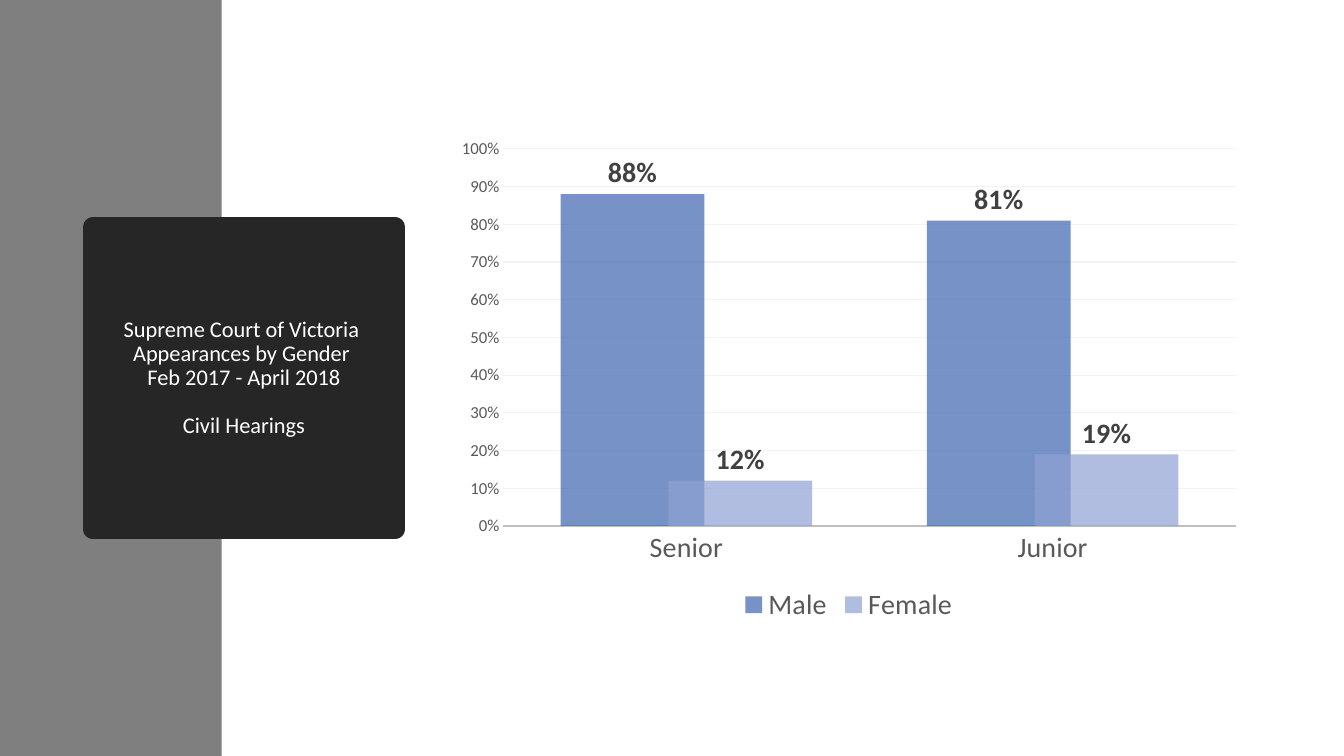
from lxml import etree
from pptx import Presentation
from pptx.chart.data import CategoryChartData
from pptx.dml.color import RGBColor
from pptx.enum.chart import XL_CHART_TYPE, XL_LABEL_POSITION, XL_LEGEND_POSITION, XL_TICK_MARK
from pptx.enum.shapes import MSO_SHAPE
from pptx.enum.text import MSO_ANCHOR, PP_ALIGN
from pptx.oxml.ns import qn
from pptx.util import Cm, Pt

RECT = MSO_SHAPE.RECTANGLE
CENTER = PP_ALIGN.CENTER
MIDDLE = MSO_ANCHOR.MIDDLE
COLUMNS = XL_CHART_TYPE.COLUMN_CLUSTERED
OUTSIDE = XL_LABEL_POSITION.OUTSIDE_END
BOTTOM = XL_LEGEND_POSITION.BOTTOM
NO_TICK = XL_TICK_MARK.NONE

FONT = "Calibri"
GREY_TEXT = "595959"
TITLE = [
    ["Supreme Court of Victoria ", "Appearances by Gender ", "Feb 2017 - April 2018"],
    ["Civil Hearings"],
]
CATEGORIES = ["Senior", "Junior"]
SERIES = [
    ("Male", (0.88, 0.81), "3C65AE"),
    ("Female", (0.12, 0.19), "90A2D3"),
]


def rgb(value):
    """Return the colour for a hex string."""
    return RGBColor.from_string(value)


def set_font(font, size, color, bold=False):
    """Style a font."""
    font.name = FONT
    font.size = Pt(size)
    font.bold = bold
    font.color.rgb = rgb(color)


def set_fill(fill, color, alpha=None):
    """Apply a solid fill with an optional opacity in percent."""
    fill.solid()
    fill.fore_color.rgb = rgb(color)
    if alpha is not None:
        clr = fill._xPr.find(qn("a:solidFill"))[0]
        etree.SubElement(clr, qn("a:alpha"), val=str(alpha * 1000))


def set_line(line, color, width):
    """Apply a solid line."""
    line.color.rgb = rgb(color)
    line.width = Pt(width)


def add_box(slide, left, top, width, height, color, border=None):
    """Add a filled rectangle, with a round-cornered border if a width is given."""
    sp = slide.shapes.add_shape(RECT, Cm(left), Cm(top), Cm(width), Cm(height))
    sp.shadow.inherit = False
    set_fill(sp.fill, color)
    if border is None:
        sp.line.fill.background()
    else:
        set_line(sp.line, color, border)
        etree.SubElement(sp.element.spPr.find(qn("a:ln")), qn("a:round"))
    return sp


def add_title(sp, paragraphs):
    """Write centred paragraphs of broken lines into a shape."""
    tf = sp.text_frame
    tf.word_wrap = True
    tf.vertical_anchor = MIDDLE
    for i, lines in enumerate(paragraphs):
        p = tf.add_paragraph() if i else tf.paragraphs[0]
        p.alignment = CENTER
        p.line_spacing = 0.9
        p.space_before = Pt(17 if i else 0)
        for j, line in enumerate(lines):
            if j:
                p.add_line_break()
            r = p.add_run()
            r.text = line
            set_font(r.font, 16, "FFFFFF")


def style_axes(chart):
    """Style the category and percentage axes."""
    cat = chart.category_axis
    cat.major_tick_mark = cat.minor_tick_mark = NO_TICK
    set_font(cat.tick_labels.font, 20, GREY_TEXT)
    set_line(cat.format.line, "BFBFBF", 1.25)

    val = chart.value_axis
    val.major_tick_mark = val.minor_tick_mark = NO_TICK
    val.minimum_scale, val.maximum_scale, val.major_unit = 0, 1, 0.1
    val.tick_labels.number_format = "0%"
    val.tick_labels.number_format_is_linked = False
    set_font(val.tick_labels.font, 12, GREY_TEXT)
    val.format.line.fill.background()
    set_line(val.major_gridlines.format.line, "F2F2F2", 0.75)


def style_series(series, color):
    """Style one series and its value labels."""
    set_fill(series.format.fill, color, 70)
    series.format.line.fill.background()
    series.invert_if_negative = False
    labels = series.data_labels
    labels.show_value = True
    labels.number_format = "0%"
    labels.number_format_is_linked = False
    labels.position = OUTSIDE
    set_font(labels.font, 20, "404040", True)


def add_column_chart(slide, left, top, width, height):
    """Add the chart of appearances by gender."""
    data = CategoryChartData(number_format="0%")
    data.categories = CATEGORIES
    for name, values, _ in SERIES:
        data.add_series(name, values)
    chart = slide.shapes.add_chart(
        COLUMNS, Cm(left), Cm(top), Cm(width), Cm(height), data
    ).chart
    set_font(chart.font, 10, "000000")
    chart.has_title = False
    chart.has_legend = True
    chart.legend.position = BOTTOM
    chart.legend.include_in_layout = False
    set_font(chart.legend.font, 20, GREY_TEXT)
    style_axes(chart)
    plot = chart.plots[0]
    plot.vary_by_categories = False
    plot.gap_width = 80
    plot.overlap = 25
    for series, (_, _, color) in zip(plot.series, SERIES):
        style_series(series, color)


def main():
    """Build and save the slide."""
    prs = Presentation()
    prs.slide_width, prs.slide_height = Cm(33.87), Cm(19.05)
    s = prs.slides.add_slide(prs.slide_layouts[6])
    add_box(s, 0, 0, 5.59, 19.05, "7F7F7F")
    add_title(add_box(s, 2.34, 5.72, 7.62, 7.62, "262626", 13.75), TITLE)
    add_column_chart(s, 11.23, 3.25, 20.32, 12.57)
    prs.save("out.pptx")


if __name__ == "__main__":
    main()
